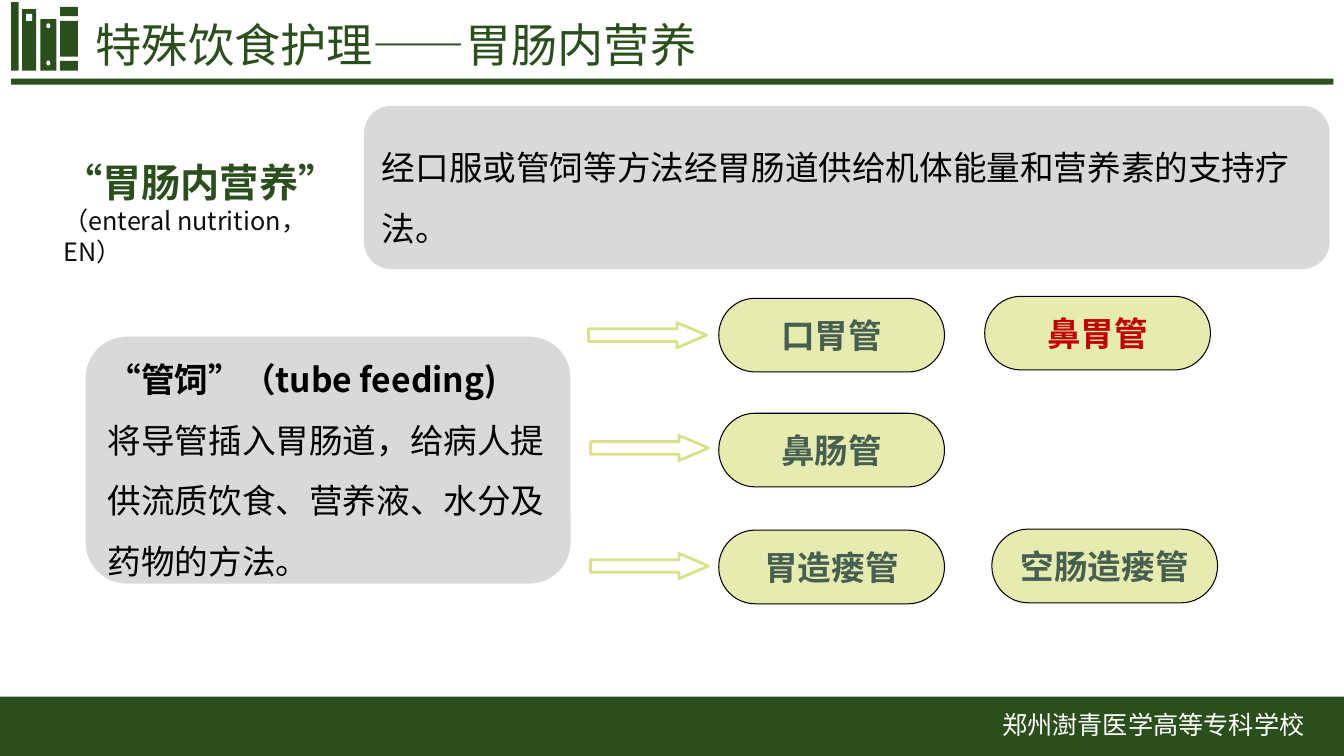
"""Build the slide on enteral nutrition and the kinds of feeding tube."""
from dataclasses import dataclass
from typing import Optional

from lxml import etree
from pptx import Presentation
from pptx.dml.color import RGBColor
from pptx.enum.shapes import MSO_SHAPE
from pptx.enum.text import MSO_ANCHOR, MSO_AUTO_SIZE, PP_ALIGN
from pptx.oxml.ns import qn
from pptx.shapes.autoshape import Shape
from pptx.slide import Slide
from pptx.text.text import TextFrame
from pptx.util import Pt

RECTANGLE = MSO_SHAPE.RECTANGLE
OVAL = MSO_SHAPE.OVAL
ROUNDED = MSO_SHAPE.ROUNDED_RECTANGLE
PILL = MSO_SHAPE.FLOWCHART_TERMINATOR
ARROW = MSO_SHAPE.RIGHT_ARROW
TOP, MIDDLE = MSO_ANCHOR.TOP, MSO_ANCHOR.MIDDLE
LEFT, CENTER = PP_ALIGN.LEFT, PP_ALIGN.CENTER
NO_AUTOFIT = MSO_AUTO_SIZE.NONE
TITLE_ONLY = 5


@dataclass(frozen=True)
class Theme:
    """Colours, fonts and type sizes of the slide."""
    green: str = "2A4F1C"
    white: str = "FFFFFF"
    panel: str = "D9D9D9"
    pill: str = "E6ECB0"
    arrow: str = "D9E289"
    black: str = "000000"
    soft_black: str = "0D0D0D"
    slate: str = "455F51"
    red: str = "C00000"
    title_font: str = "Montserrat"
    text_font: str = "Noto Sans CJK SC"
    title_size: float = 33
    term_size: float = 28
    body_size: float = 24
    small_size: float = 18


THEME = Theme()


@dataclass(frozen=True)
class Area:
    """Position and size in points."""
    left: float
    top: float
    width: float
    height: float


@dataclass(frozen=True)
class Line:
    """One paragraph and its format."""
    text: str
    size: float = THEME.body_size
    color: str = THEME.black
    bold: bool = False
    spacing: Optional[float] = None


@dataclass(frozen=True)
class Tube:
    """A feeding tube named in a pill."""
    name: str
    left: float
    top: float
    color: str = THEME.slate


BAR = Area(0, 497.5, 960, 42.5)
RULE = Area(8, 56.2, 944.5, 4.3)
BOOKS = (
    Area(8, 1.5, 5.4, 49),
    Area(43, 43.4, 12.7, 7),
    Area(43, 15, 12.7, 25.5),
    Area(43, 5, 12.7, 6.5),
    Area(28.8, 13.7, 11.5, 36.8),
    Area(15.8, 6.5, 10.1, 44),
)
BOOK_LABEL = Area(18.7, 10, 4.3, 5)
BOOK_HOLES = (Area(33.1, 16.6, 2.9, 3.6), Area(33.1, 43.2, 2.9, 3.6))
ARROWS = (
    Area(420.5, 230.4, 84.2, 18),
    Area(421.9, 311, 84.2, 18),
    Area(421.9, 395.3, 84.2, 18),
)
TUBES = (
    Tube("口胃管", 513.4, 213.1),
    Tube("鼻胃管", 703.4, 211.7, THEME.red),
    Tube("鼻肠管", 513.4, 295.2),
    Tube("胃造瘘管", 513.4, 378.7),
    Tube("空肠造瘘管", 708.5, 378),
)
PANELS = (
    (Area(260, 75.6, 689.8, 116.6), (
        Line("经口服或管饲等方法经胃肠道供给机体能量和营养素的支持疗法。", spacing=43.2),
    )),
    (Area(61.2, 240.5, 346.3, 176.4), (
        Line("“管饲”（tube feeding)", bold=True, spacing=43.2),
        Line("将导管插入胃肠道，给病人提供流质饮食、营养液、水分及药物的方法。", spacing=43.2),
    )),
)


def write_text(frame: TextFrame, *lines: Line, font: str = THEME.text_font,
               align: PP_ALIGN = LEFT, anchor: MSO_ANCHOR = TOP,
               wrap: bool = True) -> None:
    """Fill a text frame with formatted paragraphs."""
    frame.word_wrap = wrap
    frame.auto_size = NO_AUTOFIT
    frame.vertical_anchor = anchor
    for index, line in enumerate(lines):
        para = frame.add_paragraph() if index else frame.paragraphs[0]
        para.alignment = align
        if line.spacing:
            para.line_spacing = Pt(line.spacing)
        span = para.add_run()
        span.text = line.text
        span.font.size = Pt(line.size)
        span.font.bold = line.bold
        span.font.color.rgb = RGBColor.from_string(line.color)
        span.font.name = font
        east_asian = etree.SubElement(span.font._element, qn("a:ea"))
        east_asian.set("typeface", THEME.text_font)


def add_figure(page: Slide, kind: MSO_SHAPE, area: Area, fill: str,
               outline: Optional[str] = None, weight: float = 0.75) -> Shape:
    """Add a flat preset shape."""
    figure = page.shapes.add_shape(kind, Pt(area.left), Pt(area.top),
                                   Pt(area.width), Pt(area.height))
    figure.shadow.inherit = False
    figure.fill.solid()
    figure.fill.fore_color.rgb = RGBColor.from_string(fill)
    if outline:
        figure.line.color.rgb = RGBColor.from_string(outline)
        figure.line.width = Pt(weight)
    else:
        figure.line.fill.background()
    return figure


def add_text(page: Slide, area: Area, *lines: Line, align: PP_ALIGN = LEFT) -> Shape:
    """Add a text box."""
    box = page.shapes.add_textbox(Pt(area.left), Pt(area.top),
                                  Pt(area.width), Pt(area.height))
    write_text(box.text_frame, *lines, align=align)
    return box


def add_frame(page: Slide) -> None:
    """Draw the bookshelf mark, the rule, the bottom bar and the school name."""
    for area in (RULE, BAR, *BOOKS):
        add_figure(page, RECTANGLE, area, THEME.green)
    add_figure(page, RECTANGLE, BOOK_LABEL, THEME.white)
    for area in BOOK_HOLES:
        add_figure(page, OVAL, area, THEME.white)
    school = Line("郑州澍青医学高等专科学校", THEME.small_size, THEME.white, spacing=22)
    add_text(page, Area(687.6, 502.6, 272.4, 33), school, align=CENTER)


def add_title(page: Slide) -> None:
    """Place and format the title."""
    title = page.shapes.title
    title.left, title.top, title.width, title.height = Pt(61.2), Pt(12.2), Pt(828), Pt(48.2)
    write_text(title.text_frame,
               Line("特殊饮食护理——胃肠内营养", THEME.title_size, THEME.green),
               font=THEME.title_font)
    title.text_frame.paragraphs[0].line_spacing = 0.9


def add_content(page: Slide) -> None:
    """Draw the definitions, the arrows and the tubes."""
    term = add_text(page, Area(38.2, 109.4, 235.4, 63.4),
                    Line("“胃肠内营养”", THEME.term_size, THEME.green, True, 34),
                    Line("（enteral nutrition，EN）", THEME.small_size,
                         THEME.soft_black, spacing=21.6))
    term.text_frame.margin_right = Pt(30)
    for area, lines in PANELS:
        panel = add_figure(page, ROUNDED, area, THEME.panel)
        write_text(panel.text_frame, *lines, anchor=MIDDLE)
    for area in ARROWS:
        arrow = add_figure(page, ARROW, area, THEME.white, THEME.arrow, 2)
        arrow.adjustments[1] = 1.17
    for tube in TUBES:
        pill = add_figure(page, PILL, Area(tube.left, tube.top, 161.3, 52.6),
                          THEME.pill, THEME.black)
        write_text(pill.text_frame, Line(tube.name, color=tube.color, bold=True),
                   align=CENTER, anchor=MIDDLE, wrap=False)


def main() -> None:
    """Create and save the deck."""
    deck = Presentation()
    deck.slide_width, deck.slide_height = Pt(960), Pt(540)
    page = deck.slides.add_slide(deck.slide_layouts[TITLE_ONLY])
    add_frame(page)
    add_title(page)
    add_content(page)
    deck.save("out.pptx")


if __name__ == "__main__":
    main()
